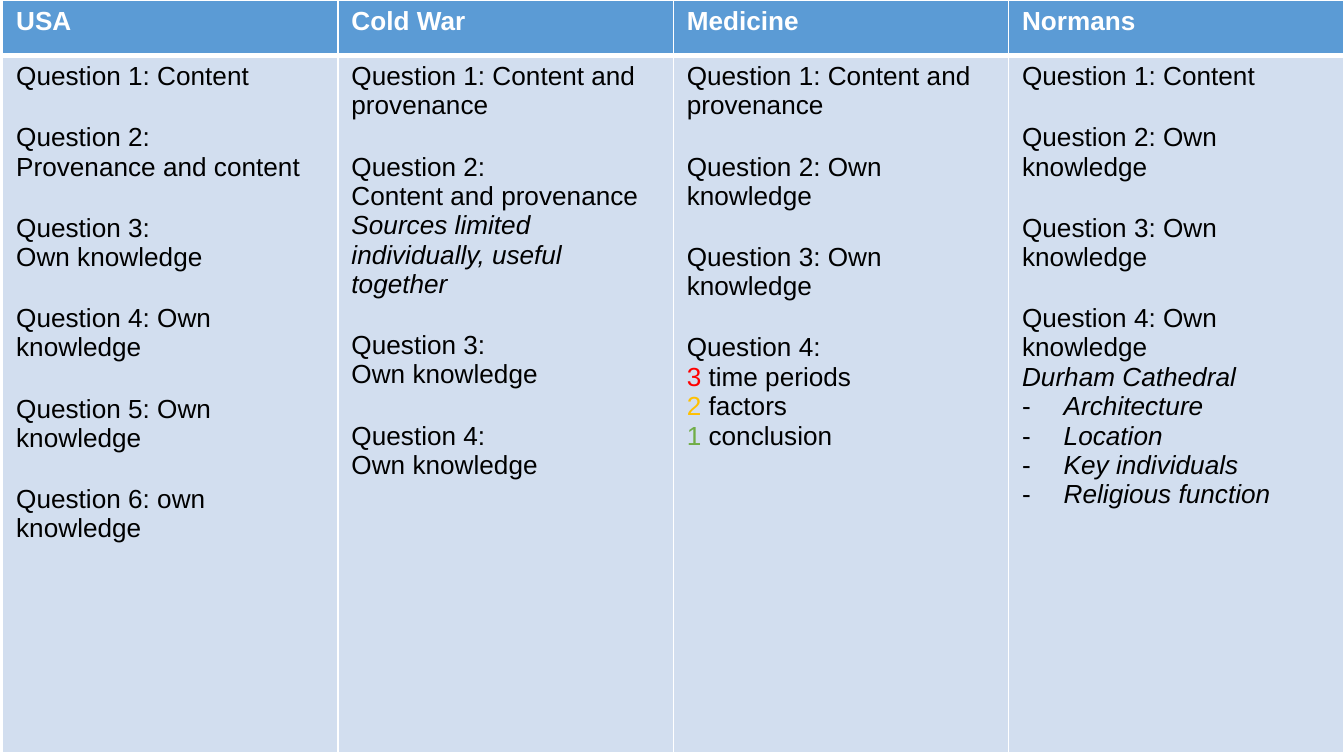
from pptx import Presentation
from pptx.dml.color import RGBColor
from pptx.oxml import parse_xml
from pptx.oxml.ns import nsdecls, qn
from pptx.util import Inches, Pt

# Content: each column has a heading and blocks; a block is a list of lines.
# A line is plain text or (style, text); a style is "italic", "bullet",
# "break" (an italic line within the paragraph above) or the colour of
# the number that opens the line.
COLUMNS = [
    ("USA", [
        ["Question 1: Content"],
        ["Question 2:", "Provenance and content"],
        ["Question 3:", "Own knowledge"],
        ["Question 4: Own knowledge"],
        ["Question 5: Own knowledge"],
        ["Question 6: own knowledge"],
    ]),
    ("Cold War", [
        ["Question 1: Content and provenance"],
        ["Question 2:", "Content and provenance",
         ("break", "Sources limited individually, useful together")],
        ["Question 3:", "Own knowledge"],
        ["Question 4:", "Own knowledge"],
    ]),
    ("Medicine", [
        ["Question 1: Content and provenance"],
        ["Question 2: Own knowledge"],
        ["Question 3: Own knowledge"],
        ["Question 4:", ("FF0000", "3 time periods"),
         ("FFC000", "2 factors"), ("70AD47", "1 conclusion")],
    ]),
    ("Normans", [
        ["Question 1: Content"],
        ["Question 2: Own knowledge"],
        ["Question 3: Own knowledge"],
        ["Question 4: Own knowledge", ("italic", "Durham Cathedral"),
         ("bullet", "Architecture"), ("bullet", "Location"),
         ("bullet", "Key individuals"), ("bullet", "Religious function")],
    ]),
]

# Layout and style
SLIDE_WIDTH = Inches(10)
SLIDE_HEIGHT = SLIDE_WIDTH * 9 // 16
TABLE_LEFT = Inches(0.02)
TABLE_WIDTH = SLIDE_WIDTH - TABLE_LEFT
ROW_HEIGHTS = [Inches(0.41), Inches(5.19)]
BLOCK_GAP = Pt(17)
BULLET_INDENT = Inches(0.31)
HEADING_FILL, BODY_FILL = "5B9BD5", "D2DEEF"
WHITE, BLACK = "FFFFFF", "000000"
THIN, THICK = Pt(1), Pt(3)


def color(value):
    return RGBColor.from_string(value)


def set_font(paragraph, font_color, bold=False, italic=False):
    font = paragraph.font
    font.name, font.size = "Arial", Pt(14)
    font.bold, font.italic = bold, italic
    font.color.rgb = color(font_color)


def format_cell(cell, fill, top=THIN, bottom=THIN):
    cell.fill.solid()
    cell.fill.fore_color.rgb = color(fill)
    properties = cell._tc.get_or_add_tcPr()
    widths = {"L": THIN, "R": THIN, "T": top, "B": bottom}
    for index, (side, width) in enumerate(widths.items()):
        properties.insert(index, parse_xml(
            f'<a:ln{side} {nsdecls("a")} w="{width}"><a:solidFill>'
            f'<a:srgbClr val="{WHITE}"/></a:solidFill></a:ln{side}>'))


def add_bullet(paragraph):
    properties = paragraph._p.get_or_add_pPr()
    properties.set("marL", str(BULLET_INDENT))
    properties.set("indent", str(-BULLET_INDENT))
    # Bullet settings come before the default run properties
    defaults = properties.find(qn("a:defRPr"))
    for element in ('buFont {} typeface="Arial"', 'buChar {} char="-"'):
        defaults.addprevious(parse_xml(f'<a:{element.format(nsdecls("a"))}/>'))


def write_line(paragraph, style, text):
    set_font(paragraph, BLACK, italic=style in ("italic", "bullet"))
    if style == "bullet":
        add_bullet(paragraph)
    if style in ("plain", "italic", "bullet"):
        paragraph.add_run().text = text
    else:
        number = paragraph.add_run()
        number.text = text[0]
        number.font.color.rgb = color(style)
        paragraph.add_run().text = text[1:]


def write_blocks(cell, blocks):
    frame = cell.text_frame
    paragraph = None
    for block_index, block in enumerate(blocks):
        for line_index, line in enumerate(block):
            style, text = ("plain", line) if isinstance(line, str) else line
            if style == "break":
                paragraph.add_line_break()
                run = paragraph.add_run()
                run.text, run.font.italic = text, True
                continue
            paragraph = frame.add_paragraph() if paragraph else frame.paragraphs[0]
            write_line(paragraph, style, text)
            if block_index and line_index == 0:
                paragraph.space_before = BLOCK_GAP


presentation = Presentation()
presentation.slide_width = SLIDE_WIDTH
presentation.slide_height = SLIDE_HEIGHT
slide = presentation.slides.add_slide(presentation.slide_layouts[6])

# Table: headings above one cell of questions per column
table = slide.shapes.add_table(
    len(ROW_HEIGHTS), len(COLUMNS), TABLE_LEFT, 0,
    TABLE_WIDTH, sum(ROW_HEIGHTS)).table
for row, height in zip(table.rows, ROW_HEIGHTS):
    row.height = height

for index, (heading, blocks) in enumerate(COLUMNS):
    table.columns[index].width = TABLE_WIDTH // len(COLUMNS)
    heading_cell, body_cell = table.cell(0, index), table.cell(1, index)
    # A thick rule parts the headings from the questions
    format_cell(heading_cell, HEADING_FILL, bottom=THICK)
    format_cell(body_cell, BODY_FILL, top=THICK)
    heading_cell.text = heading
    set_font(heading_cell.text_frame.paragraphs[0], WHITE, bold=True)
    write_blocks(body_cell, blocks)

presentation.save("out.pptx")
